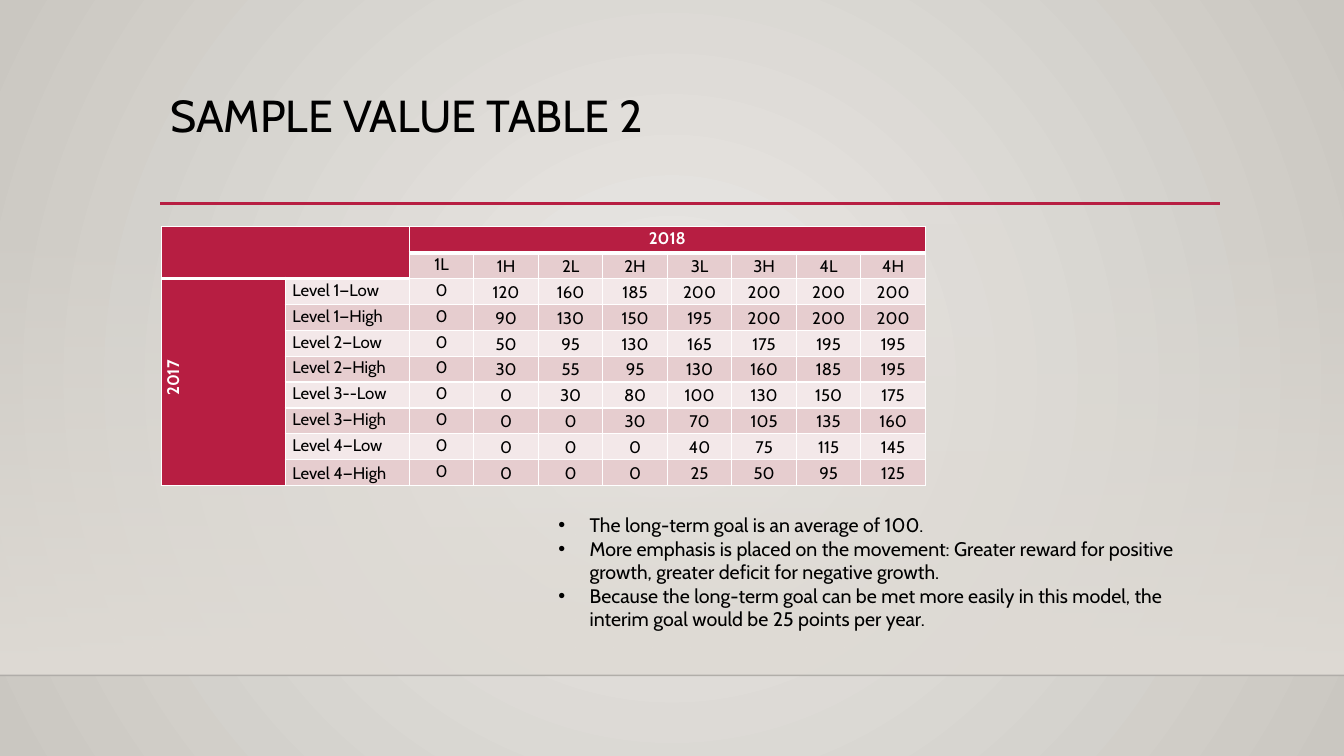
from lxml import etree
from pptx import Presentation
from pptx import util as u
from pptx.dml.color import RGBColor
from pptx.enum import shapes, text
from pptx.oxml import parse_xml
from pptx.oxml.ns import nsdecls, qn

HUES = {
    "red": "B71E42", "rose": "E6CDCF", "pale": "F3E8E9",
    "white": "FFFFFF", "black": "000000", "edge": "000001",
    "glow": "ECEAE7", "rim": "CAC7C1", "wall": "DFDBD5",
}
MID = text.MSO_ANCHOR.MIDDLE
TOP = text.MSO_ANCHOR.TOP
CENTER = text.PP_ALIGN.CENTER


def rgb(hue):
    return RGBColor.from_string(HUES[hue])


def write(para, words, size=12, hue="black", bold=False, align=None,
          space=None, indent=0, mark=None):
    props = para._p.get_or_add_pPr()
    if indent:
        props.set("marL", str(u.Inches(indent)))
    if mark:
        props.set("indent", str(-u.Inches(indent)))
        etree.SubElement(props, qn("a:buFont")).set("typeface", "Arial")
        etree.SubElement(props, qn("a:buChar")).set("char", mark)
    if align is not None:
        para.alignment = align
    if space:
        para.line_spacing = space
    if not words:
        # Keep an empty cell from growing its row
        end = etree.SubElement(para._p, qn("a:endParaRPr"))
        end.set("sz", str(size * 100))
        return
    run = para.add_run()
    run.text = words
    font = run.font
    font.name, font.size, font.bold = Deck.face, u.Pt(size), bold
    font.color.rgb = rgb(hue)


class Deck:
    face = "Cabin"

    def __init__(self, wide, high):
        self.prs = Presentation()
        self.prs.slide_width = u.Inches(wide)
        self.prs.slide_height = u.Inches(high)
        self.slide = self.prs.slides.add_slide(self.prs.slide_layouts[6])
        self.items = self.slide.shapes

    def blend(self, fill, root, stops, shade):
        fill.gradient()
        old = next(root.iter(qn("a:gradFill")))
        marks = "".join(
            f'<a:gs pos="{pos * 1000}"><a:srgbClr val="{HUES[hue]}">'
            f'<a:alpha val="{alpha * 1000}"/></a:srgbClr></a:gs>'
            for pos, hue, alpha in stops)
        old.getparent().replace(old, parse_xml(
            f'<a:gradFill {nsdecls("a")} rotWithShape="1">'
            f'<a:gsLst>{marks}</a:gsLst>{shade}</a:gradFill>'))

    def back(self, stops):
        self.blend(self.slide.background.fill, self.slide.element, stops,
                   '<a:path path="circle"><a:fillToRect l="50000" t="50000" '
                   'r="50000" b="50000"/></a:path>')

    def panel(self, box, stops):
        rect = self.items.add_shape(shapes.MSO_SHAPE.RECTANGLE,
                                    *map(u.Inches, box))
        rect.shadow.inherit = False
        rect.line.fill.background()
        self.blend(rect.fill, rect._element, stops,
                   '<a:lin ang="5400000" scaled="0"/>')

    def rule(self, left, right, y, hue, width, alpha=100):
        line = self.items.add_connector(
            shapes.MSO_CONNECTOR.STRAIGHT,
            *map(u.Inches, (left, y, right, y)))
        line.line.color.rgb = rgb(hue)
        line.line.width = u.Pt(width)
        props = line._element.spPr
        if alpha < 100:
            tint = next(props.iter(qn("a:srgbClr")))
            etree.SubElement(tint, qn("a:alpha")).set("val", str(alpha * 1000))
        etree.SubElement(props, qn("a:effectLst"))

    def words(self, box, lines, **form):
        frame = self.items.add_textbox(*map(u.Inches, box)).text_frame
        frame.word_wrap = True
        for i, line in enumerate(lines):
            para = frame.add_paragraph() if i else frame.paragraphs[0]
            write(para, line, **form)

    def grid(self, box, cols, count):
        table = self.items.add_table(count, len(cols),
                                     *map(u.Inches, box)).table
        for col, width in zip(table.columns, cols):
            col.width = u.Inches(width)
        for row in table.rows:
            row.height = u.Inches(box[3] / count)
        return table

    def cell(self, cell, words, fill, anchor=TOP, base=1, **form):
        cell.fill.solid()
        cell.fill.fore_color.rgb = rgb(fill)
        cell.margin_left = cell.margin_right = u.Inches(0.07)
        cell.margin_top = cell.margin_bottom = 0
        cell.vertical_anchor = anchor
        props = cell._tc.get_or_add_tcPr()
        for i, side in enumerate("LRTB"):
            width = u.Pt(base if side == "B" else 1)
            props.insert(i, parse_xml(
                f'<a:ln{side} {nsdecls("a")} w="{width}"><a:solidFill>'
                f'<a:srgbClr val="{HUES["white"]}"/></a:solidFill></a:ln{side}>'))
        write(cell.text_frame.paragraphs[0], words, space=1.07, **form)


HEADS = ["1L", "1H", "2L", "2H", "3L", "3H", "4L", "4H"]
LEVELS = [
    ("Level 1—Low", [0, 120, 160, 185, 200, 200, 200, 200]),
    ("Level 1—High", [0, 90, 130, 150, 195, 200, 200, 200]),
    ("Level 2—Low", [0, 50, 95, 130, 165, 175, 195, 195]),
    ("Level 2—High", [0, 30, 55, 95, 130, 160, 185, 195]),
    ("Level 3--Low", [0, 0, 30, 80, 100, 130, 150, 175]),
    ("Level 3—High", [0, 0, 0, 30, 70, 105, 135, 160]),
    ("Level 4—Low", [0, 0, 0, 0, 40, 75, 115, 145]),
    ("Level 4—High", [0, 0, 0, 0, 25, 50, 95, 125]),
]
NOTES = [
    "The long-term goal is an average of 100.",
    "More emphasis is placed on the movement: Greater reward for positive "
    "growth, greater deficit for negative growth.",
    "Because the long-term goal can be met more easily in this model, the "
    "interim goal would be 25 points per year.",
]


def values(deck):
    rows = [["", "", "2018"] + [""] * 7, ["", ""] + HEADS]
    rows += [["" if i else "2017", name] + [str(n) for n in nums]
             for i, (name, nums) in enumerate(LEVELS)]
    table = deck.grid((1.6, 2.25, 7.57, 2.57), [1.23] * 2 + [0.64] * 8,
                      len(rows))
    for r, row in enumerate(rows):
        for c, item in enumerate(row):
            form = {"align": None if c == 1 else CENTER}
            fill = "rose" if r % 2 else "pale"
            if r == 0 or c == 0 or (r == 1 and c == 1):
                fill = "red"
                form.update(hue="white", bold=True)
            if r < 2 and (r == 0 or c < 2):
                form["base"] = 3
            if c == 0 and r > 1:
                form["indent"] = 0.08
            # The first value column and level names sit at the top
            if r and (c > 2 or c == 0 or (c == 1 and r == len(rows) - 1)):
                form["anchor"] = MID
            deck.cell(table.cell(r, c), item, fill, **form)
    # Merged headings
    table.cell(0, 0).merge(table.cell(1, 1))
    table.cell(0, 2).merge(table.cell(0, 9))
    year = table.cell(2, 0)
    year.merge(table.cell(9, 0))
    year._tc.get_or_add_tcPr().set("vert", "vert270")


def main():
    deck = Deck(13.33, 7.5)
    # Backdrop
    deck.back([(0, "glow", 100), (100, "rim", 100)])
    deck.panel((0, 2.21, 13.33, 4.49), [(0, "wall", 0), (100, "wall", 100)])
    deck.rule(0, 13.33, 6.7, "edge", 1, alpha=20)
    # Title
    deck.rule(1.59, 12.1, 2.02, "red", 2.5)
    deck.words((1.59, 0.88, 10.5, 1.15), ["SAMPLE VALUE TABLE 2"],
               size=32, space=0.9)
    # Table
    values(deck)
    # Notes
    deck.words((5.44, 5.04, 6.67, 1.28), NOTES, size=14, indent=0.31, mark="•")
    deck.prs.save("out.pptx")


if __name__ == "__main__":
    main()
